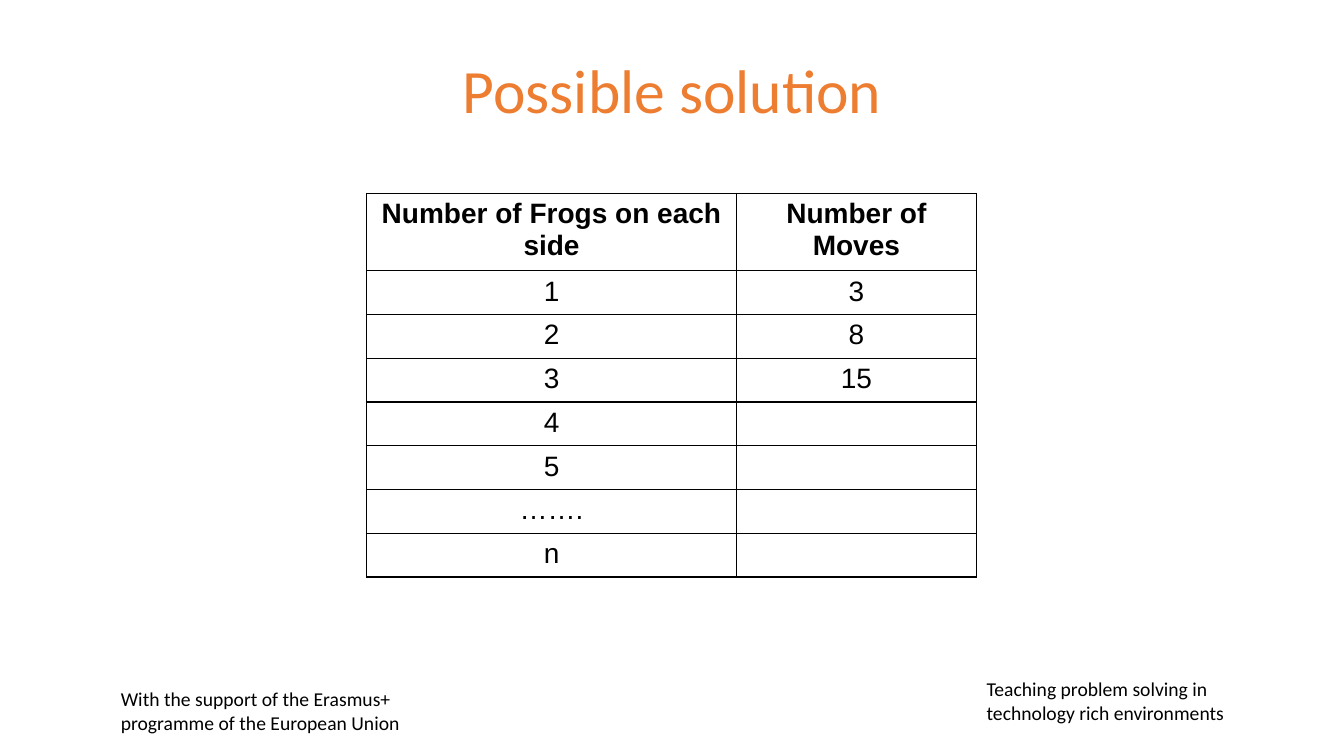
"""Build the slide with the frog puzzle's table of moves."""
from lxml import etree
from pptx import Presentation
from pptx.dml.color import RGBColor
from pptx.enum import text
from pptx.oxml import ns
from pptx.util import Pt

ROWS = [
    ("Number of Frogs on each side", "Number of Moves"),
    ("1", "3"),
    ("2", "8"),
    ("3", "15"),
    ("4", ""),
    ("5", ""),
    ("…….", ""),
    ("n", ""),
]
COL_WIDTHS = (264, 171.5)
HEADER_HEIGHT, ROW_HEIGHT = 25.2, 29.5


def color(hex_code):
    """Turn a hex string into a colour."""
    return RGBColor.from_string(hex_code)


def style(p, name, size, hex_code="000000", bold=False, align=text.PP_ALIGN.LEFT):
    """Set the font and alignment of a paragraph."""
    p.alignment = align
    f = p.font
    f.name, f.size, f.bold = name, Pt(size), bold
    f.color.rgb = color(hex_code)


def place(sp, left, top, width, height):
    """Position and size a shape in points."""
    sp.left, sp.top, sp.width, sp.height = map(Pt, (left, top, width, height))


def add_title(s, words):
    """Fill and format the title placeholder."""
    sp = s.shapes.title
    place(sp, 207.5, 36, 545.5, 61)
    tf = sp.text_frame
    tf.text = words
    tf.vertical_anchor = text.MSO_ANCHOR.MIDDLE
    p = tf.paragraphs[0]
    p.line_spacing = 0.9
    style(p, "Calibri", 44, "ED7D31", align=text.PP_ALIGN.CENTER)


def add_note(s, words, left, top, width, height):
    """Add a wrapped text box at the foot of the slide."""
    sp = s.shapes.add_textbox(*map(Pt, (left, top, width, height)))
    tf = sp.text_frame
    tf.word_wrap = True
    tf.text = words
    style(tf.paragraphs[0], "Calibri", 14)
    return sp


def add_borders(cell, hex_code="000000", width=1):
    """Draw a solid line on all four sides of a cell."""
    tc_pr = cell._tc.get_or_add_tcPr()
    for i, side in enumerate(("lnL", "lnR", "lnT", "lnB")):
        ln = etree.Element(ns.qn(f"a:{side}"), w=str(Pt(width)))
        fill = etree.SubElement(ln, ns.qn("a:solidFill"))
        etree.SubElement(fill, ns.qn("a:srgbClr"), val=hex_code)
        tc_pr.insert(i, ln)


def add_moves_table(s, left, top):
    """Add the table of frogs and moves."""
    height = HEADER_HEIGHT + ROW_HEIGHT * (len(ROWS) - 1)
    box = map(Pt, (left, top, sum(COL_WIDTHS), height))
    table = s.shapes.add_table(len(ROWS), len(COL_WIDTHS), *box).table
    table.horz_banding = False
    for col, width in zip(table.columns, COL_WIDTHS):
        col.width = Pt(width)
    for i, values in enumerate(ROWS):
        table.rows[i].height = Pt(ROW_HEIGHT if i else HEADER_HEIGHT)
        for cell, value in zip(table.rows[i].cells, values):
            cell.text = value
            cell.fill.background()
            add_borders(cell)
            style(cell.text_frame.paragraphs[0], "Arial", 20,
                  bold=i == 0, align=text.PP_ALIGN.CENTER)


def main():
    """Build and save the slide."""
    prs = Presentation()
    prs.slide_width, prs.slide_height = Pt(960), Pt(540)
    s = prs.slides.add_slide(prs.slide_layouts[5])
    add_note(s, "Teaching problem solving in technology rich environments",
             697.7, 480.2, 186, 41)
    sp = add_note(s, "With the support of the Erasmus+ programme of the European Union",
                  79.2, 487.4, 214.6, 41.8)
    sp.fill.solid()
    sp.fill.fore_color.rgb = color("FFFFFF")
    sp.text_frame.paragraphs[0].space_after = Pt(4.5)
    add_title(s, "Possible solution")
    add_moves_table(s, 262, 138.2)
    prs.save("out.pptx")


if __name__ == "__main__":
    main()
